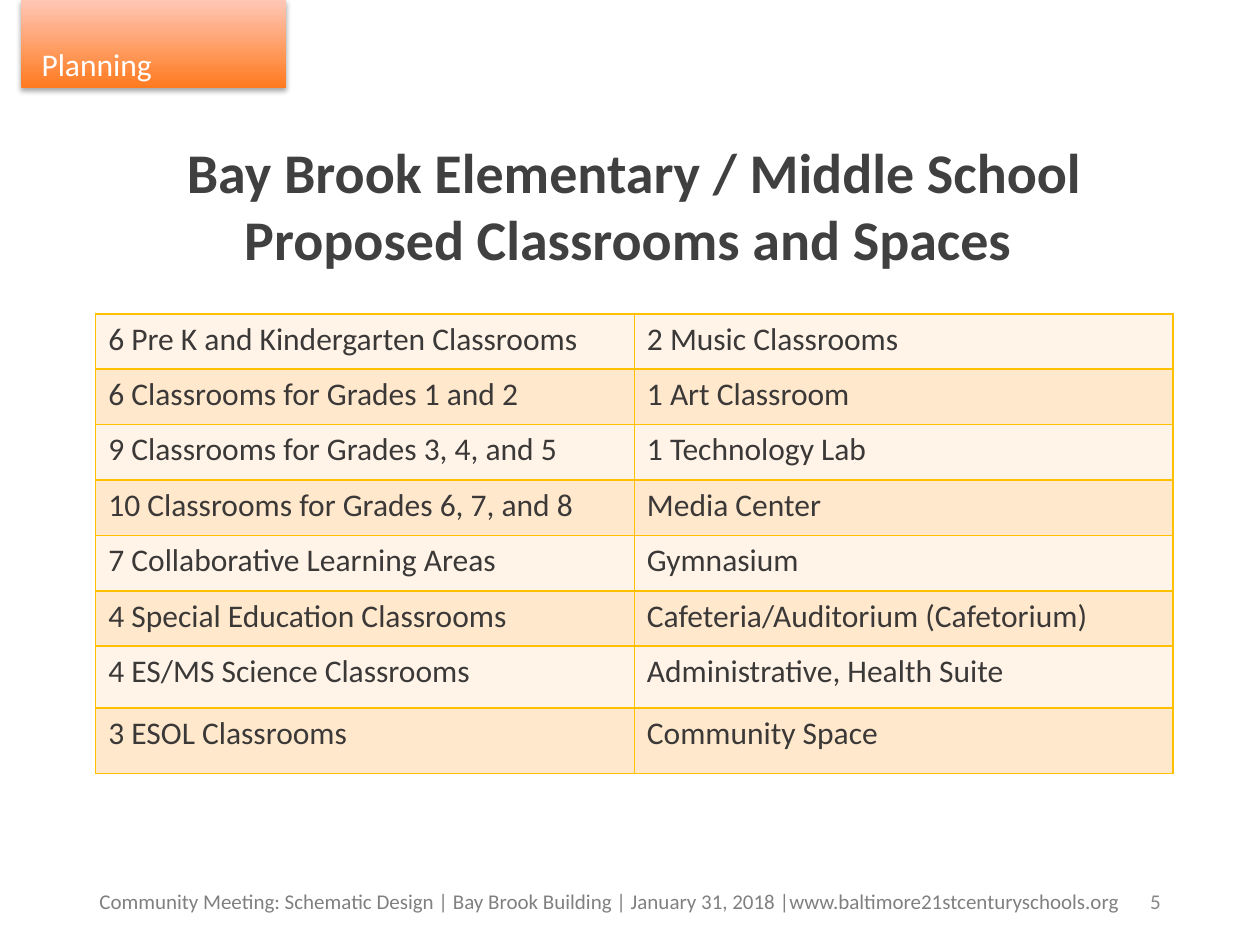
from dataclasses import dataclass

from lxml import etree
from pptx import Presentation
from pptx.dml.color import RGBColor
from pptx.enum.shapes import MSO_SHAPE
from pptx.enum.text import MSO_ANCHOR, PP_ALIGN
from pptx.oxml.ns import qn
from pptx.util import Emu, Inches, Pt

RECTANGLE = MSO_SHAPE.RECTANGLE
TOP, MIDDLE, BOTTOM = MSO_ANCHOR.TOP, MSO_ANCHOR.MIDDLE, MSO_ANCHOR.BOTTOM
LEFT, CENTER, RIGHT = PP_ALIGN.LEFT, PP_ALIGN.CENTER, PP_ALIGN.RIGHT

COLUMNS, ROWS = 100, 75
SLIDE_WIDTH, SLIDE_HEIGHT = Inches(10), Inches(7.5)


@dataclass(frozen=True)
class Theme:
    """Colours, font and type sizes of the slide."""
    font: str = "Calibri"
    title_size: int = 32
    body_size: int = 18
    footer_size: int = 12
    title: str = "404040"
    body: str = "3B3838"
    footer: str = "808080"
    number: str = "888888"
    tab_text: str = "FFFFFF"
    tab_gradient: tuple = ("FF7A1F", "FFC7B6")
    shadow: str = "000000"
    bands: tuple = ("FFF4E7", "FFE8CC")
    border: str = "FFC000"


THEME = Theme()

SPACES = [
    ("6 Pre K and Kindergarten Classrooms", "2 Music Classrooms"),
    ("6 Classrooms for Grades 1 and 2", "1 Art Classroom"),
    ("9 Classrooms for Grades 3, 4, and 5", "1 Technology Lab"),
    ("10 Classrooms for Grades 6, 7, and 8", "Media Center"),
    ("7 Collaborative Learning Areas", "Gymnasium"),
    ("4 Special Education Classrooms", "Cafeteria/Auditorium (Cafetorium)"),
    ("4 ES/MS Science Classrooms", "Administrative, Health Suite"),
    ("3 ESOL Classrooms", "Community Space"),
]
ROW_HEIGHTS = [4.4] * 6 + [4.9, 5.2]


def across(columns):
    """Return the width of a number of grid columns."""
    return Emu(round(SLIDE_WIDTH * columns / COLUMNS))


def down(rows):
    """Return the height of a number of grid rows."""
    return Emu(round(SLIDE_HEIGHT * rows / ROWS))


def place(box):
    """Turn a grid box into left, top, width and height."""
    left, top, width, height = box
    return across(left), down(top), across(width), down(height)


def write(frame, text, *, size, color, bold=False, align=LEFT, anchor=TOP):
    """Write one formatted paragraph in a text frame."""
    frame.word_wrap = True
    frame.vertical_anchor = anchor
    paragraph = frame.paragraphs[0]
    paragraph.alignment = align
    run = paragraph.add_run()
    run.text = text
    run.font.name = THEME.font
    run.font.size = Pt(size)
    run.font.bold = bold
    run.font.color.rgb = RGBColor.from_string(color)


def add_text(slide, box, text, **text_format):
    """Add a text box with one formatted paragraph."""
    shape = slide.shapes.add_textbox(*place(box))
    write(shape.text_frame, text, **text_format)


def add_color(parent, color):
    """Append an RGB colour element and return it."""
    return etree.SubElement(parent, qn("a:srgbClr"), val=color)


def add_soft_shadow(shape):
    """Give a shape a soft shadow below it."""
    shape.shadow.inherit = False
    effects = shape.element.spPr.find(qn("a:effectLst"))
    shadow = etree.SubElement(effects, qn("a:outerShdw"), blurRad=str(Pt(3.1)),
                              dist=str(Pt(1.8)), dir="5400000", rotWithShape="0")
    etree.SubElement(add_color(shadow, THEME.shadow), qn("a:alpha"), val="35000")


def add_section_tab(slide, box, text):
    """Add the gradient section tab."""
    shape = slide.shapes.add_shape(RECTANGLE, *place(box))
    shape.line.fill.background()
    shape.fill.gradient()
    shape.fill.gradient_angle = 90
    for position, (stop, color) in enumerate(zip(shape.fill.gradient_stops, THEME.tab_gradient)):
        stop.position = position
        stop.color.rgb = RGBColor.from_string(color)
    add_soft_shadow(shape)
    frame = shape.text_frame
    frame.margin_left, frame.margin_bottom = across(1.6), down(0.4)
    write(frame, text, size=THEME.body_size, color=THEME.tab_text, anchor=BOTTOM)


def add_cell_borders(cell):
    """Draw a thin line on all four sides of a cell."""
    properties = cell._tc.get_or_add_tcPr()
    for index, side in enumerate(("a:lnL", "a:lnR", "a:lnT", "a:lnB")):
        line = etree.Element(qn(side), w=str(Pt(1)))
        add_color(etree.SubElement(line, qn("a:solidFill")), THEME.border)
        properties.insert(index, line)


def add_spaces_table(slide, box):
    """Add the banded table of classrooms and spaces."""
    table = slide.shapes.add_table(len(SPACES), len(SPACES[0]), *place(box)).table
    table.first_row = table.horz_banding = False
    for column in table.columns:
        column.width = across(box[2] / len(SPACES[0]))
    for index, (row, texts, height) in enumerate(zip(table.rows, SPACES, ROW_HEIGHTS)):
        row.height = down(height)
        for cell, text in zip(row.cells, texts):
            cell.fill.solid()
            cell.fill.fore_color.rgb = RGBColor.from_string(THEME.bands[index % 2])
            add_cell_borders(cell)
            write(cell.text_frame, text, size=THEME.body_size, color=THEME.body)


def add_footer(slide, box):
    """Add the footer line and the page number at its right end."""
    left, top, width, height = box
    number_width = 4.2
    add_text(slide, (left + width - number_width, top, number_width, height), "5",
             size=THEME.footer_size, color=THEME.number, align=RIGHT, anchor=MIDDLE)
    add_text(slide, box,
             "Community Meeting: Schematic Design | Bay Brook Building | "
             "January 31, 2018 |www.baltimore21stcenturyschools.org",
             size=THEME.footer_size, color=THEME.footer, anchor=MIDDLE)


def main():
    """Build and save the slide."""
    presentation = Presentation()
    presentation.slide_width, presentation.slide_height = SLIDE_WIDTH, SLIDE_HEIGHT
    slide = presentation.slides.add_slide(presentation.slide_layouts[6])
    add_spaces_table(slide, (7.6, 24.9, 85.5, sum(ROW_HEIGHTS)))
    add_section_tab(slide, (1.7, 0, 21, 7), "Planning")
    add_text(slide, (13.3, 10.4, 74.1, 11.8),
             "Bay Brook Elementary / Middle School Proposed Classrooms and Spaces ",
             size=THEME.title_size, color=THEME.title, bold=True, align=CENTER)
    add_footer(slide, (6.9, 69.5, 86.2, 4))
    presentation.save("out.pptx")


if __name__ == "__main__":
    main()
